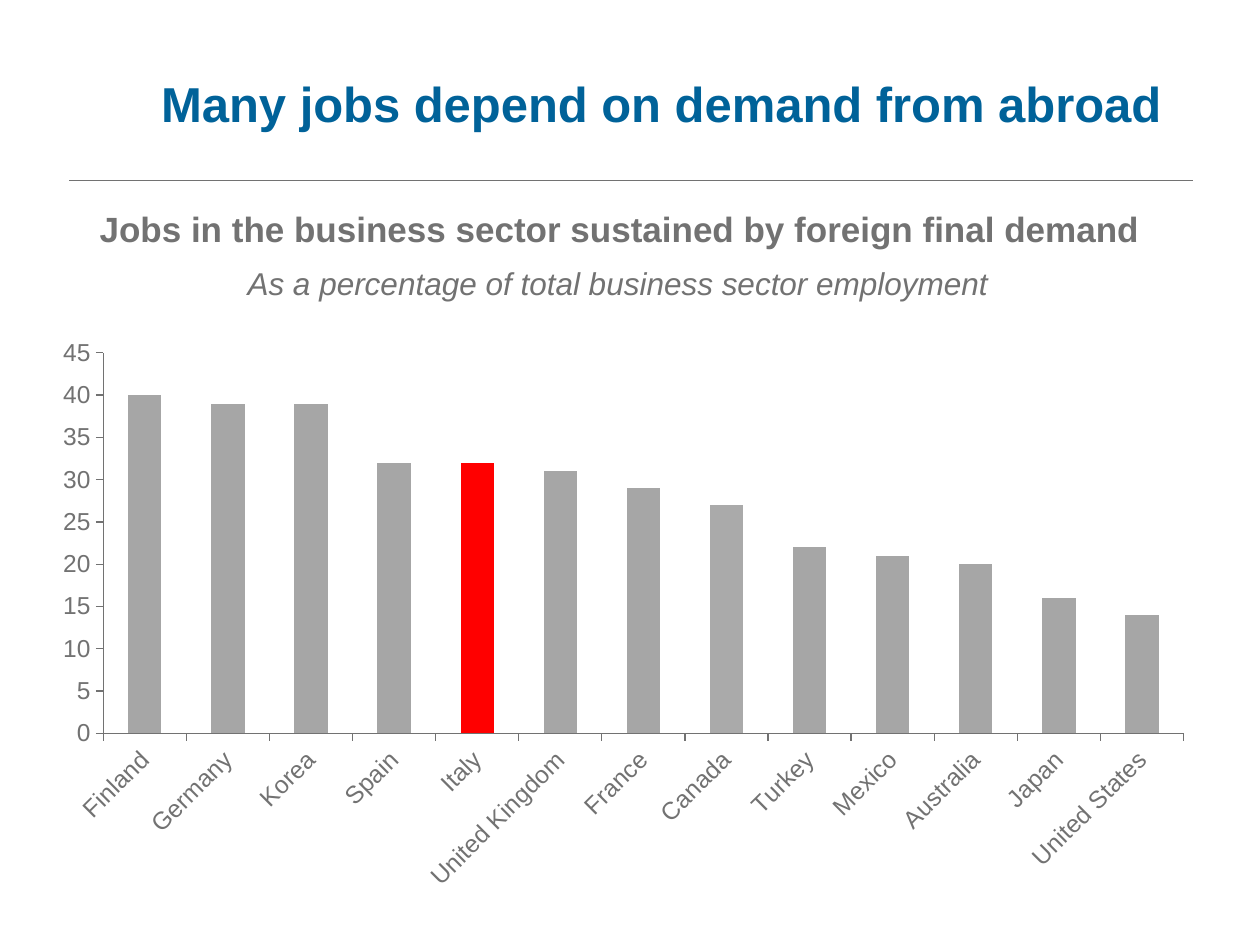
from lxml import etree
from pptx import Presentation
from pptx.chart.data import CategoryChartData
from pptx.dml.color import RGBColor
from pptx.enum.chart import XL_CHART_TYPE, XL_TICK_MARK
from pptx.enum.shapes import MSO_CONNECTOR
from pptx.enum.text import MSO_ANCHOR, PP_ALIGN
from pptx.oxml.ns import qn
from pptx.util import Pt

COLUMNS = XL_CHART_TYPE.COLUMN_CLUSTERED
TICK_OUTSIDE = XL_TICK_MARK.OUTSIDE
STRAIGHT = MSO_CONNECTOR.STRAIGHT
MIDDLE, TOP = MSO_ANCHOR.MIDDLE, MSO_ANCHOR.TOP
LEFT, CENTER = PP_ALIGN.LEFT, PP_ALIGN.CENTER

BLUE, GRAY, BAR_GRAY, LIGHT_GRAY, RED = "006299", "727272", "A6A6A6", "AAAAAA", "FF0000"

JOB_SHARES = {
    "Finland": 40, "Germany": 39, "Korea": 39, "Spain": 32, "Italy": 32,
    "United Kingdom": 31, "France": 29, "Canada": 27, "Turkey": 22,
    "Mexico": 21, "Australia": 20, "Japan": 16, "United States": 14,
}
HIGHLIGHTS = {"Italy": RED, "Canada": LIGHT_GRAY}


def rgb(color):
    return RGBColor.from_string(color)


def fill_solid(format_, color):
    format_.fill.solid()
    format_.fill.fore_color.rgb = rgb(color)


class SlideBuilder:
    def __init__(self, slide, font_name="Arial"):
        self.slide = slide
        self.font_name = font_name

    def style_font(self, font, size, color, bold=False, italic=False):
        font.name = self.font_name
        font.size = Pt(size)
        font.color.rgb = rgb(color)
        font.bold = bold
        font.italic = italic

    def rule(self, left, top, width, color, weight):
        line = self.slide.shapes.add_connector(
            STRAIGHT, Pt(left), Pt(top), Pt(left + width), Pt(top))
        line.line.color.rgb = rgb(color)
        line.line.width = Pt(weight)
        etree.SubElement(line.element.spPr, qn("a:effectLst"))

    def text(self, box, content, size, color, align=CENTER, anchor=TOP, wrap=True, **style):
        shape = self.slide.shapes.add_textbox(*map(Pt, box))
        frame = shape.text_frame
        frame.word_wrap = wrap
        frame.vertical_anchor = anchor
        paragraph = frame.paragraphs[0]
        paragraph.text = content
        paragraph.alignment = align
        self.style_font(paragraph.font, size, color, **style)

    def column_chart(self, box, values, highlights, size, color):
        data = CategoryChartData()
        data.categories = list(values)
        data.add_series("Series 1", list(values.values()))
        chart = self.slide.shapes.add_chart(COLUMNS, *map(Pt, box), data).chart
        chart.has_legend = False
        chart.has_title = False
        self.style_font(chart.font, size, color)

        plot = chart.plots[0]
        plot.gap_width = 150
        plot.vary_by_categories = False
        series = plot.series[0]
        fill_solid(series.format, BAR_GRAY)
        for index, category in enumerate(values):
            if category in highlights:
                fill_solid(series.points[index].format, highlights[category])

        for axis in (chart.category_axis, chart.value_axis):
            axis.has_major_gridlines = False
            axis.major_tick_mark = TICK_OUTSIDE
            axis.format.line.color.rgb = rgb(color)
            axis.format.line.width = Pt(0.75)
            self.style_font(axis.tick_labels.font, size, color)
        value_axis = chart.value_axis
        value_axis.minimum_scale = 0
        value_axis.maximum_scale = 45
        value_axis.major_unit = 5
        value_axis.tick_labels.number_format = "0"
        value_axis.tick_labels.number_format_is_linked = False
        self.slant_labels(chart.category_axis)
        self.place_plot(chart, x=0.054, y=0.042, w=0.926, h=0.662)

    @staticmethod
    def slant_labels(axis):
        """Turn the axis labels 45 degrees upwards."""
        body = axis._element.find(qn("c:txPr")).find(qn("a:bodyPr"))
        body.set("rot", "-2700000")
        body.set("vert", "horz")

    @staticmethod
    def place_plot(chart, **fractions):
        """Fix the inner plot area as fractions of the chart."""
        area = chart._chartSpace.chart.plotArea
        for old_layout in area.findall(qn("c:layout")):
            area.remove(old_layout)
        layout = etree.Element(qn("c:layout"))
        area.insert(0, layout)
        manual = etree.SubElement(layout, qn("c:manualLayout"))
        settings = {"layoutTarget": "inner", "xMode": "edge", "yMode": "edge", **fractions}
        for name, value in settings.items():
            etree.SubElement(manual, qn(f"c:{name}")).set("val", str(value))


def main():
    presentation = Presentation()
    presentation.slide_width = Pt(720)
    presentation.slide_height = Pt(540)
    builder = SlideBuilder(presentation.slides.add_slide(presentation.slide_layouts[6]))

    builder.rule(39.6, 103, 642.2, GRAY, 0.5)
    builder.text((85, 18.7, 604.8, 80.6), "Many jobs depend on demand from abroad",
                 28, BLUE, align=LEFT, anchor=MIDDLE, bold=True)
    builder.text((47.5, 115.2, 613.4, 31.7),
                 "Jobs in the business sector sustained by foreign final demand",
                 20, GRAY, wrap=False, bold=True)
    builder.text((23, 147.6, 660.2, 28.8),
                 "As a percentage of total business sector employment",
                 18, GRAY, italic=True)
    builder.column_chart((23, 187.9, 666.7, 328.3), JOB_SHARES, HIGHLIGHTS, 14, GRAY)

    presentation.save("out.pptx")


if __name__ == "__main__":
    main()
